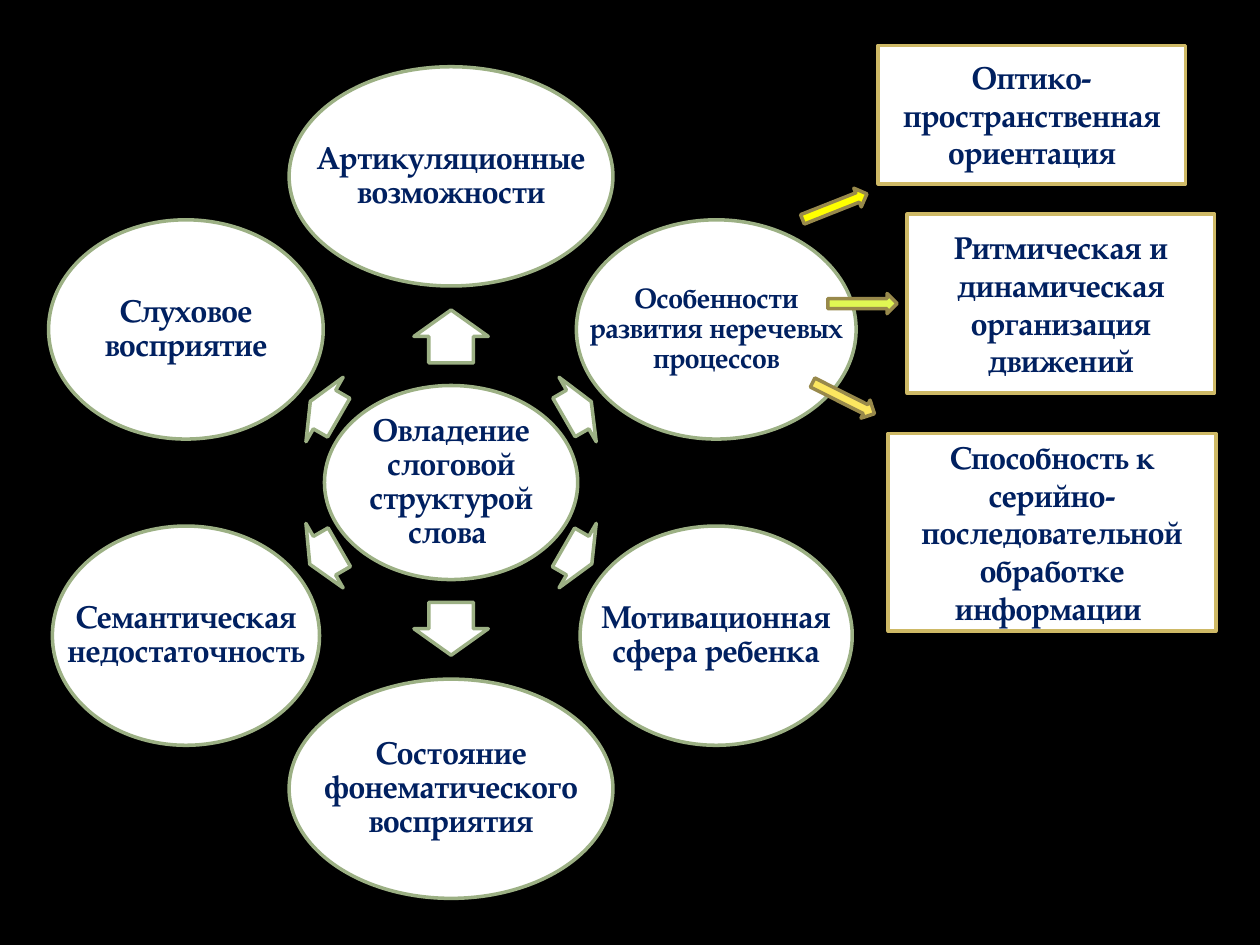
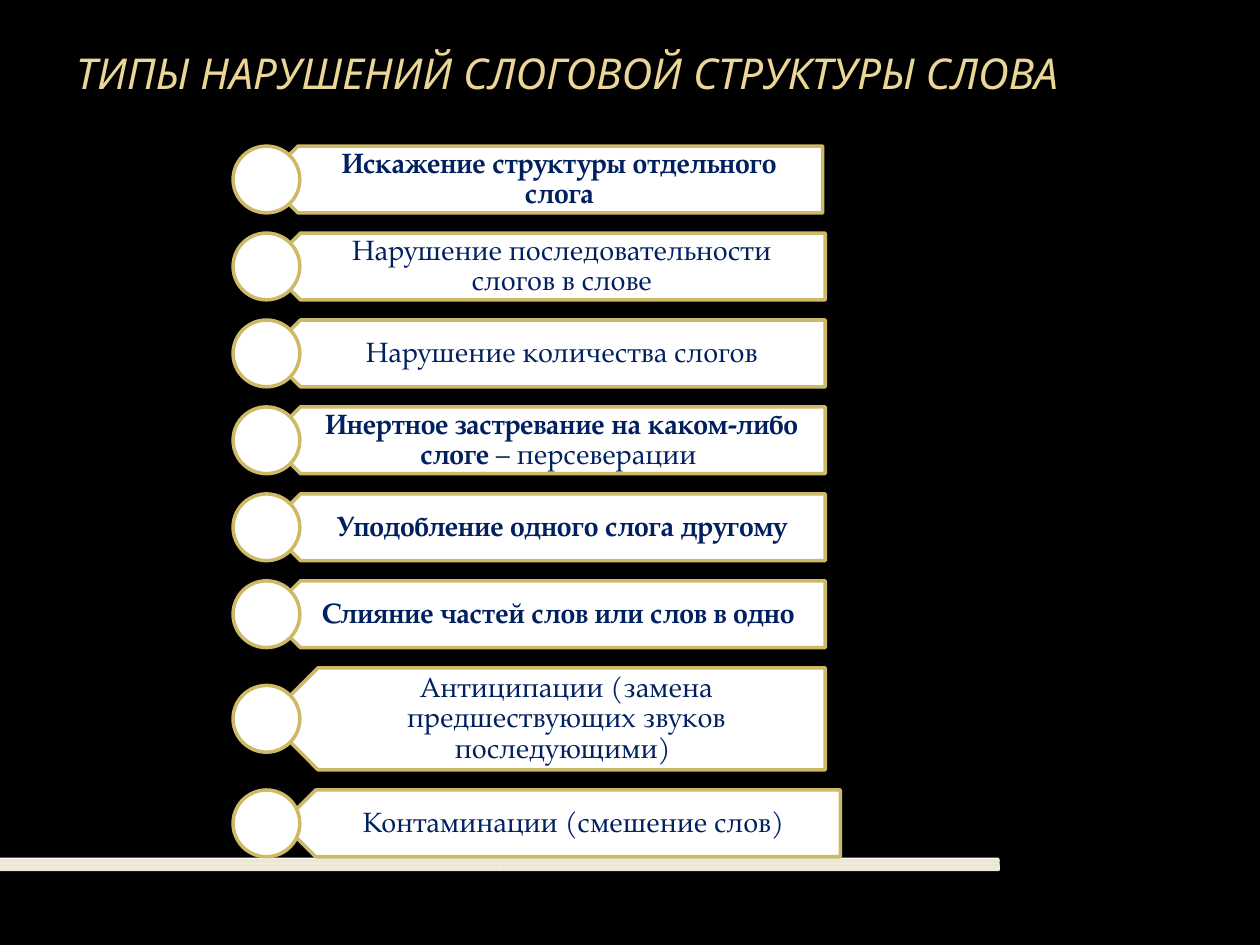
from math import cos, radians, sin

from lxml import etree
from pptx import Presentation
from pptx.dml.color import RGBColor
from pptx.enum.shapes import MSO_SHAPE
from pptx.enum.text import MSO_ANCHOR, PP_ALIGN
from pptx.oxml.ns import qn
from pptx.util import Inches, Pt

OVAL = MSO_SHAPE.OVAL
RECTANGLE = MSO_SHAPE.RECTANGLE
RIGHT_ARROW = MSO_SHAPE.RIGHT_ARROW
CALLOUT = MSO_SHAPE.UP_ARROW_CALLOUT
MIDDLE = MSO_ANCHOR.MIDDLE
CENTER = PP_ALIGN.CENTER

COLORS = {
    "background": "000000",
    "white": "FFFFFF",
    "navy": "002060",
    "green": "9CB084",
    "gold": "CEB966",
    "bronze": "98894B",
    "cream": "EDE6D3",
    "title": "EAD696",
    "yellow": "FFFF00",
    "lime": "E0F753",
    "amber": "FCE660",
}
BODY_FONT = "TeX Gyre Pagella"
TITLE_FONT = "Noto Sans"
BODY = {"name": BODY_FONT, "size": Pt(18), "bold": True}
SMALL = {**BODY, "size": Pt(16)}
PLAIN = {**SMALL, "bold": False}
TITLE = {"name": TITLE_FONT, "size": Pt(24.3), "italic": True}

HUB = (3.58, 3.83)
HUB_SIZE = (2.01, 1.54)
HUB_TEXT = "Овладение слоговой структурой слова "
ORBIT = 2.43
ARROW_ORBIT = 1.16
FACTORS = [
    (270, 2.57, 0.42, "Артикуляционные возможности", BODY),
    (330, 2.22, 0.25, "Особенности развития неречевых процессов", SMALL),
    (30, 2.16, 0.26, "Мотивационная сфера ребенка", BODY),
    (90, 2.57, 0.42, "Состояние фонематического восприятия", BODY),
    (150, 2.12, 0.27, "Семантическая недостаточность", BODY),
    (210, 2.18, 0.26, "Слуховое восприятие", BODY),
]
PROCESSES = [
    ((6.97, 0.36, 2.44, 1.1), "Оптико-пространственная ориентация",
     (6.35, 1.56), -21.6, "yellow"),
    ((7.2, 1.7, 2.44, 1.42), "Ритмическая и динамическая организация движений",
     (6.57, 2.33), 0, "lime"),
    ((7.05, 3.44, 2.6, 1.57),
     "Способность к серийно-последовательной обработке информации ",
     (6.42, 3.08), 26.7, "amber"),
]
DISC = 0.53
GAP = 0.16
TALL = 0.81
DISORDERS = [
    (2.1, DISC, [("Искажение структуры отдельного слога", SMALL)]),
    (2.12, DISC, [("Нарушение последовательности слогов в слове", PLAIN)]),
    (2.12, DISC, [("Нарушение количества слогов", PLAIN)]),
    (2.12, DISC, [("Инертное застревание на каком-либо слоге", SMALL),
                  (" – персеверации ", PLAIN)]),
    (2.12, DISC, [("Уподобление одного слога другому", SMALL)]),
    (2.12, DISC, [("Слияние частей слов или слов в одно ", SMALL)]),
    (2.12, TALL, [("Антиципации (замена предшествующих звуков последующими) ",
                   PLAIN)]),
    (2.24, DISC, [("Контаминации (смешение слов) ", PLAIN)]),
]


def color(name):
    return RGBColor.from_string(COLORS[name])


def add_page(deck):
    page = deck.slides.add_slide(deck.slide_layouts[6])
    page.background.fill.solid()
    page.background.fill.fore_color.rgb = color("background")
    return page


def paint(shape, fill, line):
    shape.shadow.inherit = False
    shape.fill.solid()
    shape.fill.fore_color.rgb = color(fill)
    shape.line.color.rgb = color(line)
    shape.line.width = Pt(2)


def add_figure(page, kind, place, fill, line, rotation=0):
    shape = page.shapes.add_shape(kind, *map(Inches, place))
    paint(shape, fill, line)
    shape.rotation = rotation
    return shape


def write(shape, spans, ink="navy", margins=(0.1, 0.05, 0.1, 0.05), spacing=1.0):
    frame = shape.text_frame
    frame.word_wrap = True
    frame.vertical_anchor = MIDDLE
    for side, margin in zip(("left", "top", "right", "bottom"), margins):
        setattr(frame, f"margin_{side}", Inches(margin))
    para = frame.paragraphs[0]
    para.alignment = CENTER
    para.line_spacing = spacing
    for text, style in spans:
        span = para.add_run()
        span.text = text
        span.font.color.rgb = color(ink)
        for name, value in style.items():
            setattr(span.font, name, value)


def centered(middle, width, height):
    return middle[0] - width / 2, middle[1] - height / 2, width, height


def around_hub(radius, angle):
    turn = radians(angle)
    return HUB[0] + radius * cos(turn), HUB[1] + radius * sin(turn)


def add_bubble(page, middle, size, text, style):
    place = centered(middle, *size)
    add_figure(page, OVAL, place, "white", "green")
    box = page.shapes.add_textbox(*map(Inches, place))
    write(box, [(text, style)], margins=(0.03,) * 4, spacing=0.9)


def add_bar(page, left, top, height, spans):
    right, bottom, notch = left + 4.43, top + height, height / 2
    outline = [(right, bottom), (left + notch, bottom), (left, top + notch),
               (left + notch, top), (right, top)]
    points = [(Inches(x), Inches(y)) for x, y in outline]
    builder = page.shapes.build_freeform(*points[0])
    builder.add_line_segments(points[1:], close=True)
    bar = builder.convert_to_shape()
    paint(bar, "white", "gold")
    indent = 0.44 if height == TALL else 0.37
    write(bar, spans, margins=(indent, 0.07, 0.12, 0.07), spacing=0.9)


def make_translucent(shape):
    for tint in shape.element.spPr.iter(qn("a:srgbClr")):
        etree.SubElement(tint, qn("a:alpha"), val="90000")


def add_bottom_band(page):
    rows = [(RECTANGLE, 6.88, 0.02, 0), (CALLOUT, 6.85, 0.03, 180),
            (CALLOUT, 6.82, 0.03, 180)]
    for kind, top, height, rotation in rows:
        add_figure(page, kind, (0, top, 7.92, height), "gold", "white", rotation)
        for left in (0, 3.96):
            strip = add_figure(page, RECTANGLE, (left, top + 0.01, 3.96, 0.01),
                               "cream", "cream")
            make_translucent(strip)


def build_factors(page):
    add_bubble(page, HUB, HUB_SIZE, HUB_TEXT, BODY)
    for angle, width, arrow_length, text, style in FACTORS:
        arrow = add_figure(page, RIGHT_ARROW,
                           centered(around_hub(ARROW_ORBIT, angle), arrow_length, 0.59),
                           "white", "green", angle)
        arrow.adjustments[0] = 0.6
        add_bubble(page, around_hub(ORBIT, angle), (width, 1.74), text, style)
    for place, text, arrow_corner, angle, fill in PROCESSES:
        add_figure(page, RIGHT_ARROW, (*arrow_corner, 0.55, 0.16), fill, "bronze", angle)
        card = add_figure(page, RECTANGLE, place, "white", "gold")
        write(card, [(text, BODY)])


def build_disorders(page):
    heading = page.shapes.add_textbox(*map(Inches, (0, 0.25, 9, 0.65)))
    write(heading, [("ТИПЫ НАРУШЕНИЙ СЛОГОВОЙ СТРУКТУРЫ СЛОВА", TITLE)], "title")
    add_bottom_band(page)
    top = 1.16
    for left, height, spans in DISORDERS:
        add_bar(page, left, top, height, spans)
        disc_top = top + (height - DISC) / 2
        add_figure(page, OVAL, (1.85, disc_top, DISC, DISC), "white", "gold")
        top += height + GAP


def main():
    deck = Presentation()
    deck.slide_width = Inches(10)
    deck.slide_height = Inches(7.5)
    build_factors(add_page(deck))
    build_disorders(add_page(deck))
    deck.save("out.pptx")


if __name__ == "__main__":
    main()
